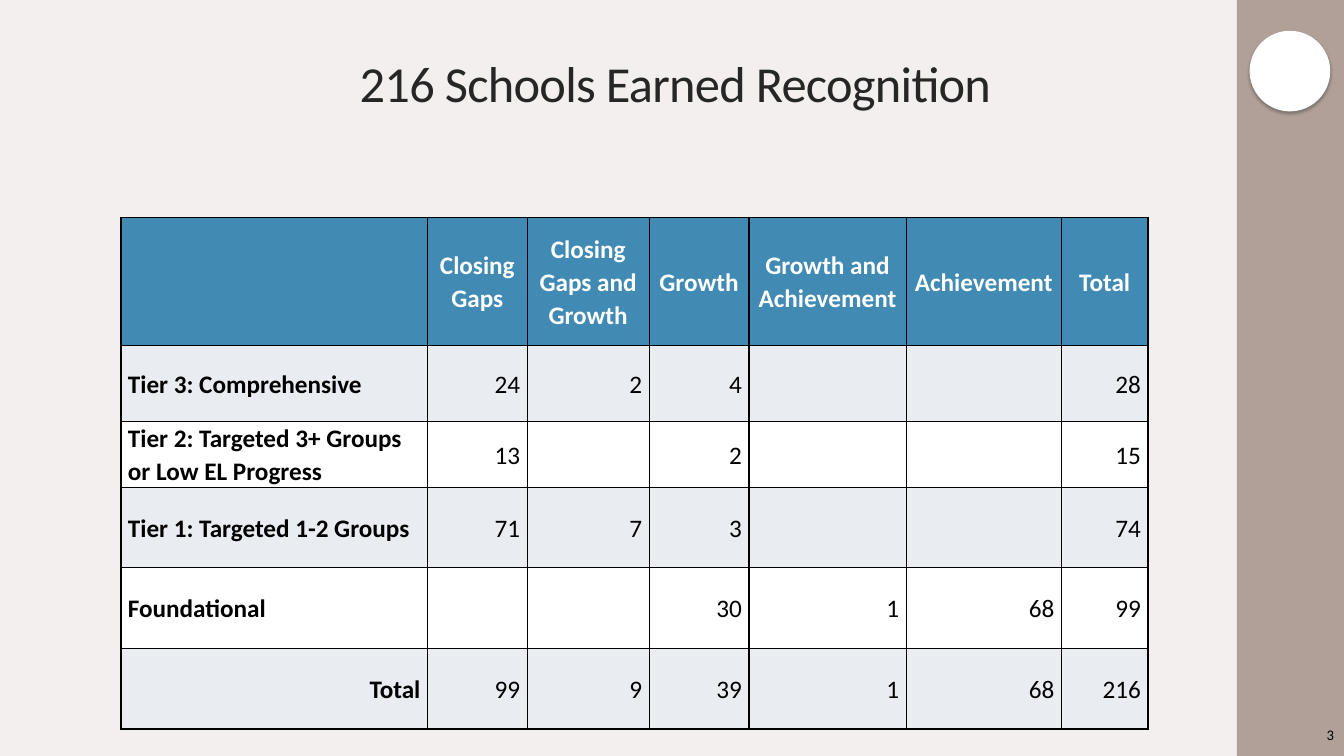
from pptx import Presentation, util as u
from pptx.dml.color import RGBColor
from pptx.enum import shapes, text
from pptx.oxml import parse_xml
from pptx.oxml.ns import nsdecls

PAPER = RGBColor(0xF2, 0xEF, 0xEE)
TAUPE = RGBColor(0xB0, 0xA0, 0x97)
WHITE = RGBColor(0xFF, 0xFF, 0xFF)
BLACK = RGBColor(0x00, 0x00, 0x00)
INK = RGBColor(0x26, 0x26, 0x26)
BLUE = RGBColor(0x41, 0x8A, 0xB3)
PALE = RGBColor(0xE9, 0xED, 0xF2)
LEFT, MID, RIGHT = text.PP_ALIGN.LEFT, text.PP_ALIGN.CENTER, text.PP_ALIGN.RIGHT
CENTRE = text.MSO_ANCHOR.MIDDLE


def style(para, align, size, color, bold=False, lead=None):
    para.alignment = align
    para.line_spacing = lead
    look = {"name": "Calibri", "size": u.Pt(size), "bold": bold}
    for font in [para.font] + [run.font for run in para.runs]:
        for key, val in look.items():
            setattr(font, key, val)
        font.color.rgb = color


def label(words, box, *look):
    frame = slide.shapes.add_textbox(*map(u.Pt, box)).text_frame
    for key, val in {"word_wrap": True, "vertical_anchor": CENTRE, "text": words}.items():
        setattr(frame, key, val)
    style(frame.paragraphs[0], *look)
    return frame.paragraphs[0].runs[0]


deck = Presentation()
deck.slide_width, deck.slide_height = u.Pt(960), u.Pt(540)
slide = deck.slides.add_slide(deck.slide_layouts[6])
slide.background.fill.solid()
slide.background.fill.fore_color.rgb = PAPER

# Side band and white disc
kind = shapes.MSO_SHAPE
for form, box, color in [
    (kind.RECTANGLE, (883.5, 0, 76.5, 540), TAUPE),
    (kind.OVAL, (892.6, 22, 57.6, 57.6), WHITE),
]:
    shape = slide.shapes.add_shape(form, *map(u.Pt, box))
    shape.shadow.inherit = False
    shape.fill.solid()
    shape.fill.fore_color.rgb = color
    shape.line.fill.background()

# Soft shadow under the disc
shade = parse_xml(
    f'<a:outerShdw {nsdecls("a")} blurRad="{u.Pt(2)}" dist="{u.Pt(2)}" dir="5400000" '
    'algn="t" rotWithShape="0"><a:srgbClr val="373737"><a:alpha val="40000"/>'
    '</a:srgbClr></a:outerShdw>')
shape.element.spPr.find("{*}effectLst").append(shade)

# Title
title = label("216 Schools Earned Recognition", (86.4, 22.3, 792, 80),
              MID, 36, INK, False, 0.85)
title.font._element.set("spc", "-50")

# Table of schools by tier
rows = [
    ["", "Closing Gaps", "Closing Gaps and Growth", "Growth",
     "Growth and Achievement", "Achievement", "Total"],
    ["Tier 3: Comprehensive", 24, 2, 4, "", "", 28],
    ["Tier 2: Targeted 3+ Groups or Low EL Progress", 13, "", 2, "", "", 15],
    ["Tier 1: Targeted 1-2 Groups", 71, 7, 3, "", "", 74],
    ["Foundational", "", "", 30, 1, 68, 99],
    ["Total", 99, 9, 39, 1, 68, 216],
]
wide = [218.9, 71.3, 87.1, 71.3, 112.3, 110.9, 61.9]
high = [91.4, 54.4, 47, 57.2, 57.6, 57.6]
grid = slide.shapes.add_table(
    len(rows), len(wide), *map(u.Pt, (86.4, 155.5, sum(wide), sum(high)))).table
for col, size in zip(grid.columns, wide):
    col.width = u.Pt(size)
for row, size in zip(grid.rows, high):
    row.height = u.Pt(size)

inset = {"margin_left": u.Pt(5), "margin_right": u.Pt(5), "margin_top": 0,
         "margin_bottom": 0, "vertical_anchor": CENTRE}
for r, row in enumerate(rows):
    for c, val in enumerate(row):
        cell = grid.cell(r, c)
        for key, gap in inset.items():
            setattr(cell, key, gap)
        for side in "LRTB":
            cell._tc.get_or_add_tcPr().append(parse_xml(
                f'<a:ln{side} {nsdecls("a")} w="{u.Pt(1)}"><a:solidFill>'
                f'<a:srgbClr val="{BLACK}"/></a:solidFill></a:ln{side}>'))
        cell.fill.solid()
        cell.fill.fore_color.rgb = BLUE if r == 0 else PALE if r % 2 else WHITE
        cell.text = str(val)
        align = MID if r == 0 else LEFT if c == 0 and val != "Total" else RIGHT
        style(cell.text_frame.paragraphs[0], align, 18,
              BLACK if r else WHITE, r == 0 or c == 0, 1.07)

# Page number
label("3", (883.5, 510.5, 76.5, 28.8), RIGHT, 10.5, BLACK)

deck.save("out.pptx")
